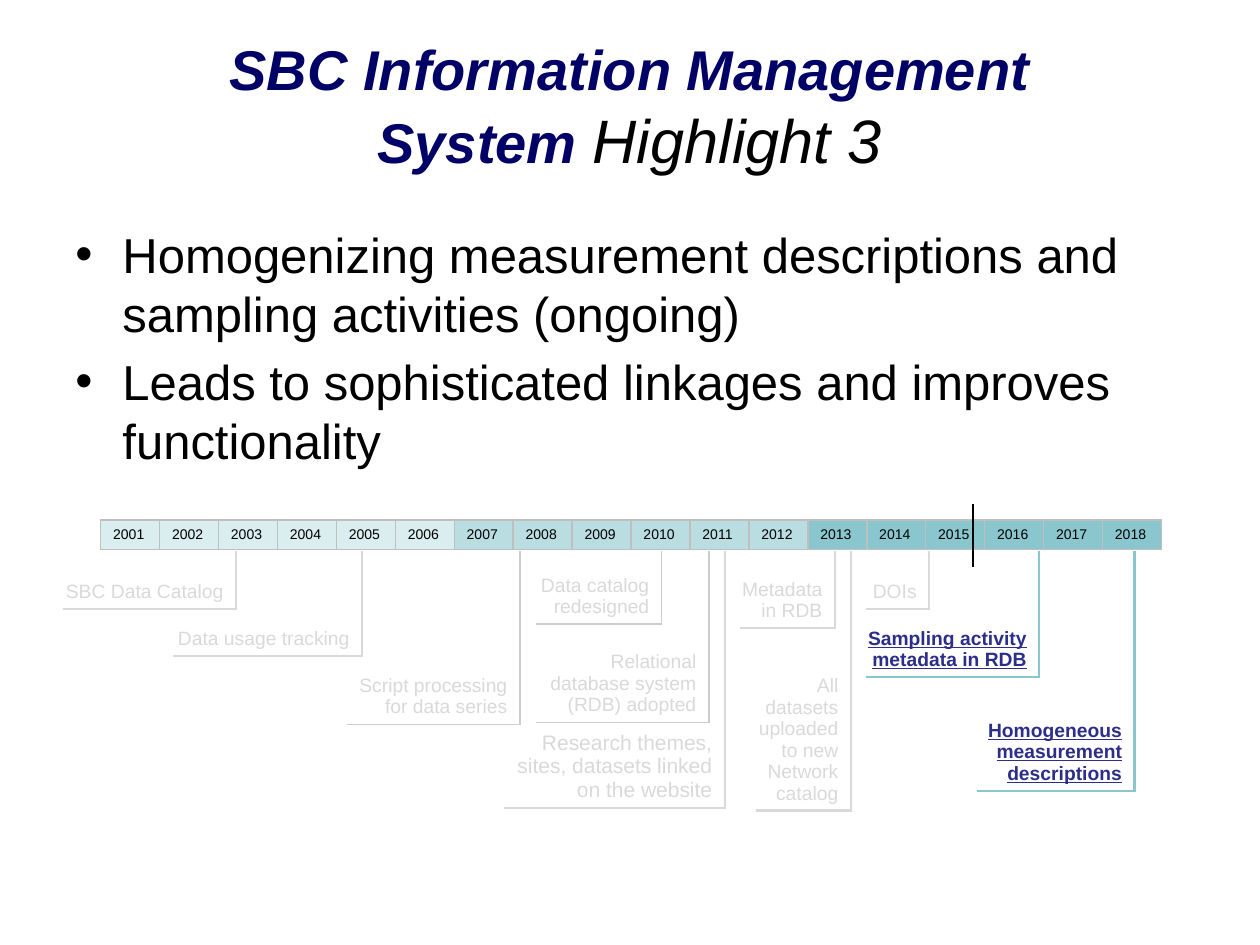
from dataclasses import dataclass
from lxml import etree
from pptx import Presentation
from pptx.dml.color import RGBColor
from pptx.enum.shapes import MSO_CONNECTOR
from pptx.enum.text import MSO_ANCHOR, PP_ALIGN
from pptx.oxml.ns import qn
from pptx.util import Cm, Pt

LEFT, MID, RIGHT = PP_ALIGN.LEFT, PP_ALIGN.CENTER, PP_ALIGN.RIGHT
TOP, CENTER, BOTTOM = MSO_ANCHOR.TOP, MSO_ANCHOR.MIDDLE, MSO_ANCHOR.BOTTOM
STRAIGHT = MSO_CONNECTOR.STRAIGHT


@dataclass(frozen=True)
class Theme:
    font: str = "Arial"
    ink: str = "000000"
    navy: str = "000066"
    link: str = "2D2D8A"
    faded: str = "D9D9D9"
    thin: str = "CCCCCC"
    grid: str = "BFBFBF"
    teal: str = "8AC6CD"
    eras: tuple = ("DAEDEF", "BADDE1", "8AC6CD")
    head: float = 32
    tail: float = 35
    body: float = 28
    note: float = 11
    large: float = 12
    year: float = 8


THEME = Theme()


@dataclass(frozen=True)
class Style:
    size: float
    color: str = THEME.ink
    bold: bool = False
    italic: bool = False
    under: bool = False


@dataclass(frozen=True)
class Event:
    """A timeline note; lengths are in centimetres."""
    text: str
    left: float
    width: float
    height: float
    line: str = THEME.faded
    weight: float = 1.5
    style: Style = Style(THEME.note, THEME.faded)


ACTIVE = Style(THEME.note, THEME.link, bold=True, under=True)
LARGE = Style(THEME.large, THEME.faded)
DATE = Style(THEME.year)
PAST = (THEME.thin, 1)
NEXT = (THEME.teal, 1.5, ACTIVE)

EVENTS = [
    Event("Research themes, sites, datasets linked on the website",
          10.16, 4.45, 5.18, style=LARGE),
    Event("SBC Data Catalog", 1.27, 3.49, 1.17),
    Event("Data catalog redesigned", 10.8, 2.54, 1.47, *PAST),
    Event("Script processing for data series", 6.99, 3.49, 3.49, *PAST),
    Event("Data usage tracking", 3.49, 3.81, 2.11),
    Event("Metadata in RDB", 14.92, 1.91, 1.55),
    Event("Relational database system (RDB) adopted",
          10.8, 3.49, 3.45, *PAST),
    Event("DOIs", 17.46, 1.27, 1.17),
    Event("All datasets uploaded to new Network catalog", 15.24, 1.91, 5.23),
    Event("Homogeneous measurement descriptions", 19.69, 3.18, 4.83, *NEXT),
    Event("Sampling activity metadata in RDB", 17.46, 3.49, 2.54, *NEXT),
]
YEARS = range(2001, 2019)
ERA = 6  # years that share one shade
POINTS = [
    "Homogenizing measurement descriptions and sampling activities (ongoing)",
    "Leads to sophisticated linkages and improves functionality",
]


def add_run(para, text: str, style: Style) -> None:
    run = para.add_run()
    run.text = text
    font = run.font
    font.name, font.size = THEME.font, Pt(style.size)
    font.bold, font.italic, font.underline = style.bold, style.italic, style.under
    font.color.rgb = RGBColor.from_string(style.color)


def add_box(slide, left, top, width, height, anchor, inset):
    frame = slide.shapes.add_textbox(
        Cm(left), Cm(top), Cm(width), Cm(height)).text_frame
    frame.word_wrap = True
    frame.vertical_anchor = anchor
    frame.margin_left = frame.margin_right = Cm(inset)
    frame.margin_top = frame.margin_bottom = Cm(0.13)
    return frame


def set_bullet(para) -> None:
    props = para._p.get_or_add_pPr()
    props.set("marL", str(Cm(0.95)))
    props.set("indent", str(-Cm(0.95)))
    etree.SubElement(props, qn("a:buFont"), typeface=THEME.font)
    etree.SubElement(props, qn("a:buChar"), char="•")


def set_edges(cell, sides: str, color: str, weight: float) -> None:
    """Line the named sides (of L, R, T, B) and clear the others."""
    props = cell._tc.get_or_add_tcPr()
    for side in "LRTB":
        edge = etree.SubElement(props, qn(f"a:ln{side}"), w=str(Pt(weight)))
        if side in sides:
            fill = etree.SubElement(edge, qn("a:solidFill"))
            etree.SubElement(fill, qn("a:srgbClr"), val=color)
        else:
            etree.SubElement(edge, qn("a:noFill"))


def add_grid(slide, cols: int, left, top, width, height):
    table = slide.shapes.add_table(
        1, cols, Cm(left), Cm(top), Cm(width), Cm(height)).table
    table.first_row = table.horz_banding = False
    return table


def fill_cell(cell, text: str, style: Style, align, anchor, inset) -> None:
    cell.margin_left, cell.margin_right = Cm(inset), Cm(0.25)
    cell.margin_top = cell.margin_bottom = Cm(0.13)
    cell.vertical_anchor = anchor
    para = cell.text_frame.paragraphs[0]
    para.alignment = align
    add_run(para, text, style)


def add_event(slide, event: Event) -> None:
    cell = add_grid(slide, 1, event.left, 11.11,
                    event.width, event.height).cell(0, 0)
    set_edges(cell, "RB", event.line, event.weight)
    cell.fill.background()
    fill_cell(cell, event.text, event.style, RIGHT, BOTTOM, 0)


def add_years(slide) -> None:
    table = add_grid(slide, len(YEARS), 2.03, 10.48, 21.39, 0.58)
    for i, year in enumerate(YEARS):
        cell = table.cell(0, i)
        set_edges(cell, "LRTB", THEME.grid, 1)
        cell.fill.solid()
        cell.fill.fore_color.rgb = RGBColor.from_string(THEME.eras[i // ERA])
        fill_cell(cell, str(year), DATE, LEFT, TOP, 0.25)


def add_now(slide) -> None:
    """Mark the present day on the timeline."""
    line = slide.shapes.add_connector(
        STRAIGHT, Cm(19.61), Cm(10.16), Cm(19.61), Cm(11.43))
    line.line.color.rgb = RGBColor.from_string(THEME.ink)
    line.line.width = Pt(1)
    etree.SubElement(line._element.spPr, qn("a:effectLst"))


def main() -> None:
    deck = Presentation()
    deck.slide_width, deck.slide_height = Cm(25.4), Cm(19.05)
    slide = deck.slides.add_slide(deck.slide_layouts[6])

    title = add_box(slide, 2.22, 0.95, 20.96, 2.34, CENTER, 0.5).paragraphs[0]
    title.alignment = MID
    add_run(title, "SBC Information Management System ",
            Style(THEME.head, THEME.navy, bold=True, italic=True))
    add_run(title, "Highlight 3", Style(THEME.tail, italic=True))

    body = add_box(slide, 1.27, 4.39, 23.83, 4.17, TOP, 0.25)
    for i, point in enumerate(POINTS):
        para = body.add_paragraph() if i else body.paragraphs[0]
        set_bullet(para)
        if i:
            para.space_before = Pt(5.6)
        add_run(para, point, Style(THEME.body))

    add_years(slide)
    for event in EVENTS:
        add_event(slide, event)
    add_now(slide)
    deck.save("out.pptx")


if __name__ == "__main__":
    main()
